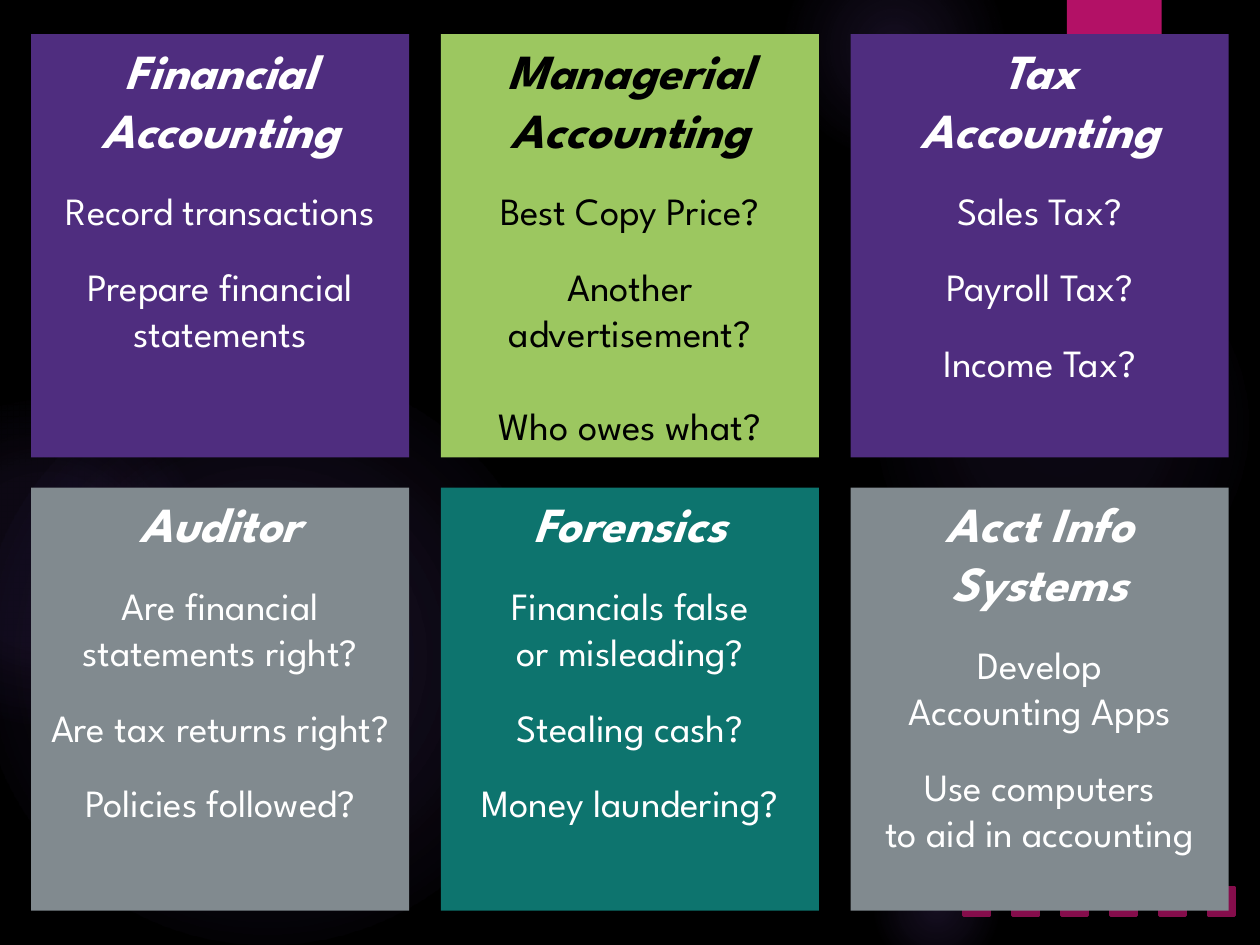
from dataclasses import dataclass

import lxml.etree
import pptx
import pptx.dml.color
import pptx.enum.shapes
import pptx.enum.text
import pptx.oxml
import pptx.oxml.ns
import pptx.util

Cm = pptx.util.Cm
Pt = pptx.util.Pt

COLORS = {
    "black": "000000",
    "white": "FFFFFF",
    "glow": "9B6BF2",
    "tab": "B31166",
    "square": "860D4C",
    "square_line": "840D4B",
    "purple": "4F2D7F",
    "green": "9CC760",
    "gray": "818A8F",
    "teal": "0D746E",
}
FONT = "League Spartan"
GAP = 16.8  # points between the items of a card


@dataclass
class Glow:
    left: float
    top: float
    size: float
    stops: tuple[tuple[int, int], ...]  # (position %, opacity %)


@dataclass
class Card:
    heading: str
    items: tuple[str, ...]
    fill: str
    text_color: str = "white"
    last_gap: float = GAP


GLOWS = (
    Glow(17.5, 4.65, 7.82, ((0, 7), (36, 6), (69, 0))),
    Glow(15.8, -1.27, 4.45, ((0, 14), (36, 7), (73, 0))),
    Glow(17.5, 16.94, 2.74, ((0, 14), (36, 7), (66, 0))),
    Glow(-0.43, 7.42, 11.63, ((0, 11), (36, 10), (75, 0))),
    Glow(-2.34, 8.05, 6.55, ((0, 8), (36, 8), (72, 0))),
)

CARDS = (
    Card("Financial Accounting",
         ("Record transactions", "Prepare financial statements"), "purple"),
    Card("Managerial Accounting",
         ("Best Copy Price?", "Another advertisement?", "Who owes what?"),
         "green", text_color="black", last_gap=26.5),
    Card("Tax\nAccounting",
         ("Sales Tax?", "Payroll Tax?", "Income Tax?"), "purple"),
    Card("Auditor",
         ("Are financial statements right?", "Are tax returns right?",
          "Policies followed?"), "gray"),
    Card("Forensics",
         ("Financials false\nor misleading?", "Stealing cash?",
          "Money laundering?"), "teal"),
    Card("Acct Info\nSystems",
         ("Develop\nAccounting Apps", "Use computers\nto aid in accounting"),
         "gray"),
)


def rgb(name: str) -> pptx.dml.color.RGBColor:
    return pptx.dml.color.RGBColor.from_string(COLORS[name])


def add_box(slide, left: float, top: float, width: float, height: float,
            fill: str, line: str | None = None,
            kind=pptx.enum.shapes.MSO_SHAPE.RECTANGLE):
    """Add a plain shape, with lengths in centimetres."""
    shape = slide.shapes.add_shape(kind, Cm(left), Cm(top), Cm(width), Cm(height))
    shape.shadow.inherit = False
    shape.fill.solid()
    shape.fill.fore_color.rgb = rgb(fill)
    if line:
        shape.line.color.rgb = rgb(line)
        shape.line.width = Pt(1.5)
    else:
        shape.line.fill.background()
    return shape


def add_glow(slide, glow: Glow) -> None:
    """Add a circle that fades out from its centre."""
    shape = add_box(slide, glow.left, glow.top, glow.size, glow.size, "glow",
                    kind=pptx.enum.shapes.MSO_SHAPE.OVAL)
    stops = "".join(
        f'<a:gs pos="{position * 1000}"><a:srgbClr val="{COLORS["glow"]}">'
        f'<a:alpha val="{opacity * 1000}"/></a:srgbClr></a:gs>'
        for position, opacity in glow.stops)
    gradient = pptx.oxml.parse_xml(
        f'<a:gradFill {pptx.oxml.ns.nsdecls("a")}><a:gsLst>{stops}</a:gsLst>'
        '<a:path path="circle"><a:fillToRect l="50000" t="50000" r="50000" '
        'b="50000"/></a:path></a:gradFill>')
    properties = shape.element.spPr
    properties.replace(properties.find(pptx.oxml.ns.qn("a:solidFill")), gradient)


def write_text(paragraph, text: str, *, size: float, color: str,
               bold: bool = False, italic: bool = False,
               space_before: float = 0) -> None:
    paragraph.text = text
    paragraph.alignment = pptx.enum.text.PP_ALIGN.CENTER
    paragraph.space_before = Pt(space_before)
    for run in paragraph.runs:
        run.font.name = FONT
        run.font.size = Pt(size)
        run.font.bold = bold
        run.font.italic = italic
        run.font.color.rgb = rgb(color)


def add_card(slide, card: Card, left: float, top: float) -> None:
    shape = add_box(slide, left, top, 7.62, 8.53, card.fill)
    frame = shape.text_frame
    frame.word_wrap = True
    frame.vertical_anchor = pptx.enum.text.MSO_ANCHOR.TOP
    write_text(frame.paragraphs[0], card.heading, size=28,
               color=card.text_color, bold=True, italic=True)
    gaps = [GAP] * (len(card.items) - 1) + [card.last_gap]
    for item, gap in zip(card.items, gaps):
        write_text(frame.add_paragraph(), item, size=22,
                   color=card.text_color, space_before=gap)


def main() -> None:
    presentation = pptx.Presentation()
    presentation.slide_width = Cm(25.4)
    presentation.slide_height = Cm(19.05)
    slide = presentation.slides.add_slide(presentation.slide_layouts[6])

    # Background with soft glows
    slide.background.fill.solid()
    slide.background.fill.fore_color.rgb = rgb("black")
    for glow in GLOWS:
        add_glow(slide, glow)

    # Top tab and bottom row of squares
    add_box(slide, 21.51, 0, 1.91, 3.05, "tab")
    for index in range(6):
        add_box(slide, 19.43 + index * 0.985, 17.88, 0.53, 0.58,
                "square", line="square_line")

    # Grid of cards, three to a row
    for index, card in enumerate(CARDS):
        row, column = divmod(index, 3)
        add_card(slide, card, 0.63 + column * 8.26, 0.69 + row * 9.14)

    presentation.save("out.pptx")


if __name__ == "__main__":
    main()
